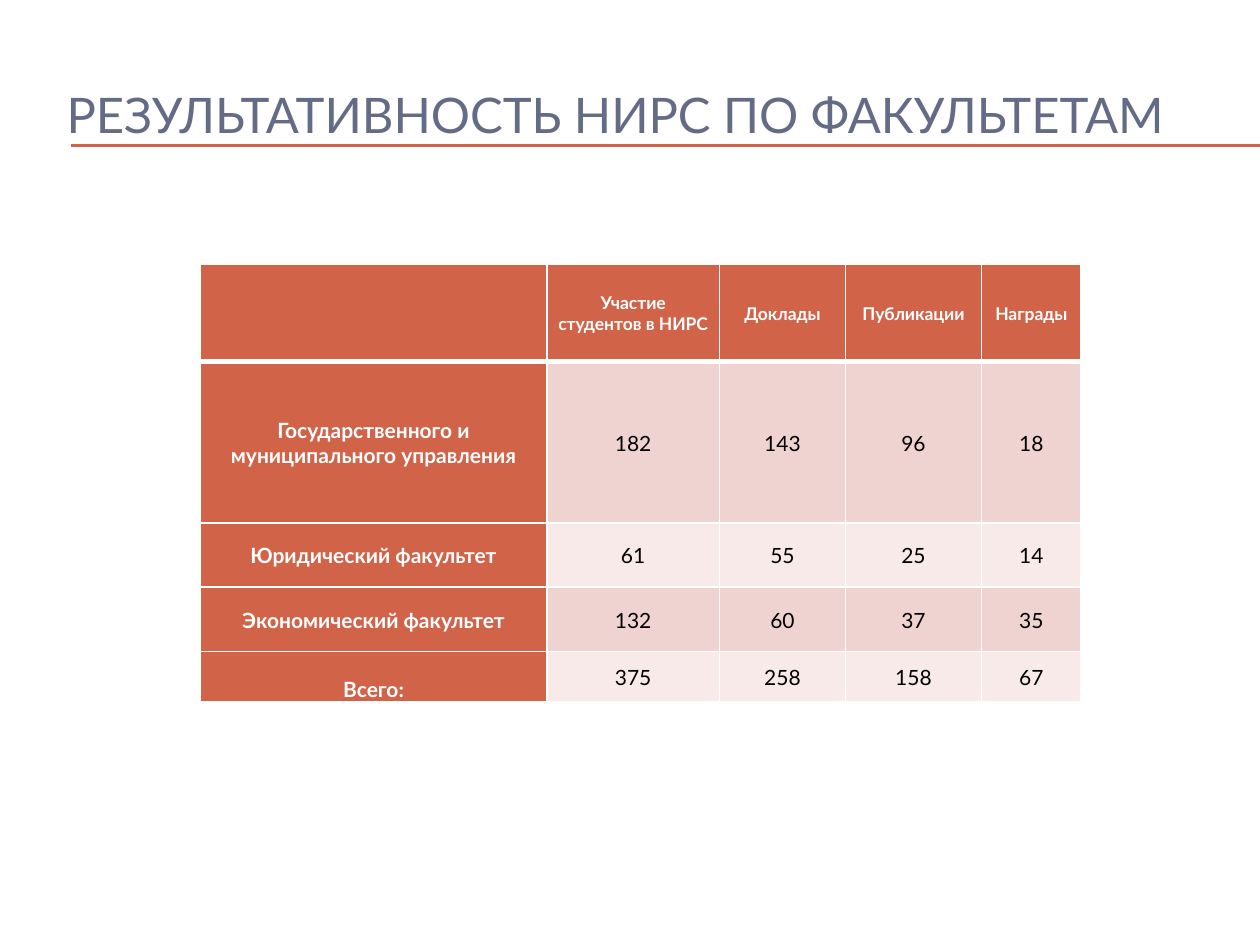
from lxml import etree
from pptx import Presentation
from pptx.dml.color import RGBColor
from pptx.enum.shapes import MSO_CONNECTOR
from pptx.enum.text import MSO_ANCHOR, PP_ALIGN
from pptx.oxml.ns import qn
from pptx.util import Inches, Pt

STRAIGHT = MSO_CONNECTOR.STRAIGHT
MIDDLE, BOTTOM = MSO_ANCHOR.MIDDLE, MSO_ANCHOR.BOTTOM
CENTER = PP_ALIGN.CENTER

FONT = "Lato"
ACCENT, TITLE_COLOR = "D16349", "646B86"
WHITE, BLACK = "FFFFFF", "000000"
BANDS = ("EED3D0", "F7EAE9")

COLUMN_WIDTHS = (2.75, 1.37, 1, 1.08, 0.79)
ROW_HEIGHTS = (0.77, 1.28, 0.51, 0.51, 0.4)
ROWS = (
    ("", "Участие\nстудентов в НИРС", "Доклады", "Публикации", "Награды"),
    ("Государственного и муниципального управления", "182", "143", "96", "18"),
    ("Юридический факультет", "61", "55", "25", "14"),
    ("Экономический факультет", "132", "60", "37", "35"),
    ("Всего:", "375", "258", "158", "67"),
)


def color(value):
    return RGBColor.from_string(value)


def add_run(paragraph, text, size, text_color, bold=False):
    run = paragraph.add_run()
    run.text = text
    run.font.name = FONT
    run.font.size = Pt(size)
    run.font.bold = bold
    run.font.color.rgb = color(text_color)


def add_title(slide, text):
    box = slide.shapes.add_textbox(Inches(0.43), Inches(0.44), Inches(9.5), Inches(0.92))
    frame = box.text_frame
    frame.word_wrap = True
    frame.vertical_anchor = MIDDLE
    add_run(frame.paragraphs[0], text, 28, TITLE_COLOR)


def add_rule(slide, top):
    rule = slide.shapes.add_connector(
        STRAIGHT, Inches(0.56), Inches(top), Inches(10), Inches(top))
    rule.line.color.rgb = color(ACCENT)
    rule.line.width = Pt(0.75)
    etree.SubElement(rule._element.spPr, qn("a:effectLst"))


def set_borders(cell, top, bottom):
    properties = cell._tc.get_or_add_tcPr()
    for side, width in (("L", 1), ("R", 1), ("T", top), ("B", bottom)):
        line = etree.SubElement(properties, qn(f"a:ln{side}"), w=str(Pt(width)))
        fill = etree.SubElement(line, qn("a:solidFill"))
        etree.SubElement(fill, qn("a:srgbClr"), val=WHITE)


def fill_cell(cell, text, row, column):
    is_heading = row == 0 or column == 0
    is_total_label = row == len(ROWS) - 1 and column == 0

    # Borders come before the fill; the header is set off by a thick line
    set_borders(cell, 3 if row == 1 else 1, 3 if row == 0 else 1)
    cell.fill.solid()
    cell.fill.fore_color.rgb = color(ACCENT if is_heading else BANDS[(row - 1) % 2])

    cell.vertical_anchor = BOTTOM if is_total_label else MIDDLE
    cell.margin_left = cell.margin_right = cell.margin_top = Inches(0.01)
    cell.margin_bottom = 0
    if not text:
        return
    frame = cell.text_frame
    for index, line in enumerate(text.split("\n")):
        paragraph = frame.add_paragraph() if index else frame.paragraphs[0]
        paragraph.alignment = CENTER
        add_run(paragraph, line, 10 if row == 0 else 12,
                WHITE if is_heading else BLACK, is_heading)


def add_results_table(slide):
    table = slide.shapes.add_table(
        len(ROWS), len(COLUMN_WIDTHS), Inches(1.59), Inches(2.1),
        Inches(sum(COLUMN_WIDTHS)), Inches(sum(ROW_HEIGHTS))).table
    for column, width in zip(table.columns, COLUMN_WIDTHS):
        column.width = Inches(width)
    for row, height in zip(table.rows, ROW_HEIGHTS):
        row.height = Inches(height)
    for row, values in enumerate(ROWS):
        for column, text in enumerate(values):
            fill_cell(table.cell(row, column), text, row, column)


def main():
    presentation = Presentation()
    presentation.slide_width = Inches(10)
    presentation.slide_height = Inches(7.5)
    slide = presentation.slides.add_slide(presentation.slide_layouts[6])

    # Double rule under the title
    for top in (1.15, 1.16):
        add_rule(slide, top)
    add_title(slide, "РЕЗУЛЬТАТИВНОСТЬ НИРС ПО ФАКУЛЬТЕТАМ")

    # Results by faculty
    add_results_table(slide)
    presentation.save("out.pptx")


if __name__ == "__main__":
    main()
